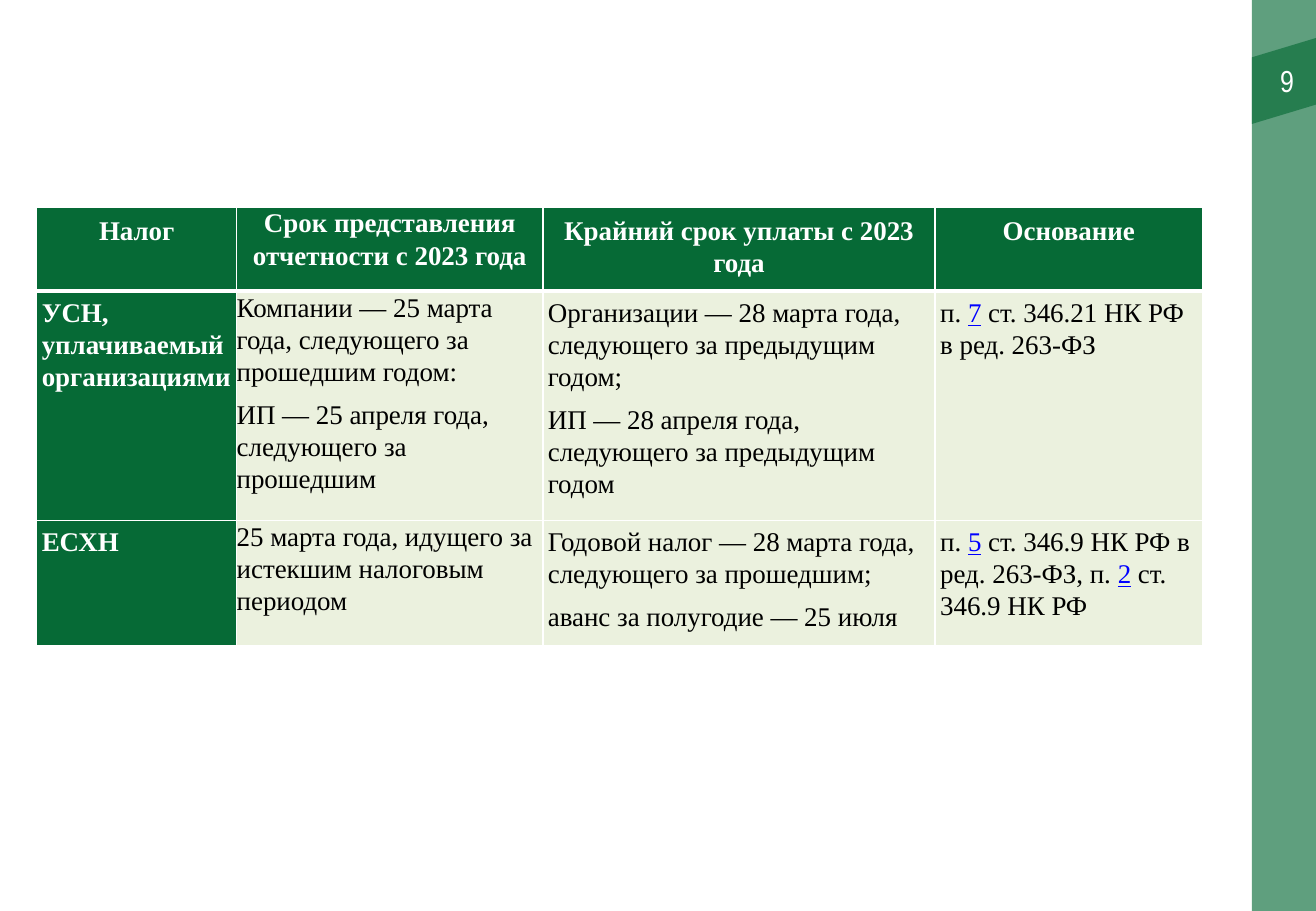
from lxml.etree import SubElement
from pptx import Presentation
from pptx.dml.color import RGBColor
from pptx.enum.shapes import MSO_SHAPE
from pptx.enum.text import MSO_ANCHOR, PP_ALIGN
from pptx.oxml.ns import qn
from pptx.util import Pt

# Text between bars is a reference, shown blue and underlined.
HEADER = ["Налог", "Срок представления отчетности с 2023 года",
          "Крайний срок уплаты с 2023 года", "Основание"]
TAXES = [
    [["УСН, уплачиваемый организациями"],
     ["Компании — 25 марта года, следующего за прошедшим годом:",
      "ИП — 25 апреля года, следующего за прошедшим"],
     ["Организации — 28 марта года, следующего за предыдущим годом;",
      "ИП — 28 апреля года, следующего за предыдущим годом"],
     ["п. |7| ст. 346.21 НК РФ в ред. 263-ФЗ"]],
    [["ЕСХН"],
     ["25 марта года, идущего за истекшим налоговым периодом"],
     ["Годовой налог — 28 марта года, следующего за прошедшим;",
      "аванс за полугодие — 25 июля"],
     ["п. |5| ст. 346.9 НК РФ в ред. 263-ФЗ, п. |2| ст. 346.9 НК РФ"]],
]
PAGE_NUMBER = "9"

COLORS = {"green": "066A36", "pale": "EBF1DE", "white": "FFFFFF",
          "black": "000000", "reference": "0000FF"}
SLIDE_WIDTH, SLIDE_HEIGHT = 780, 540
BAND_LEFT = 742
TAG_CORNERS = [(BAND_LEFT, 34), (SLIDE_WIDTH, 22.5),
               (SLIDE_WIDTH, 62), (BAND_LEFT, 73.5)]
TABLE_LEFT, TABLE_TOP = 21.8, 122.6
COLUMN_WIDTHS = [118.5, 181.5, 232.5, 158.5]
ROW_HEIGHTS = [46.5, 127, 69]
DEADLINE_COLUMN = 1
MARGINS = ("margin_left", "margin_top", "margin_right", "margin_bottom")


def rgb(name):
    return RGBColor.from_string(COLORS[name])


def apply_format(target, values):
    for attribute, value in values.items():
        setattr(target, attribute, value)


def style_band(shape):
    """Fill with see-through green, without line or shadow."""
    shape.shadow.inherit = False
    shape.line.fill.background()
    shape.fill.solid()
    shape.fill.fore_color.rgb = rgb("green")
    color = shape.fill._xPr.find(qn("a:solidFill"))[0]
    SubElement(color, qn("a:alpha"), val="64000")


def add_run(paragraph, text, color, **font_format):
    run = paragraph.add_run()
    run.text = text
    apply_format(run.font, font_format)
    run.font.color.rgb = rgb(color)


def draw_borders(cell, widths):
    properties = cell._tc.get_or_add_tcPr()
    for side, width in widths.items():
        line = SubElement(properties, qn("a:ln" + side), w=str(Pt(width)))
        fill = SubElement(line, qn("a:solidFill"))
        SubElement(fill, qn("a:srgbClr"), val=COLORS["white"])


def fill_cell(cell, paragraphs, row, column):
    is_header = row == 0
    is_dark = is_header or column == 0
    draw_borders(cell, {"L": 1, "R": 1, "T": 3 if row == 1 else 1,
                        "B": 3 if is_header else 1})
    cell.fill.solid()
    cell.fill.fore_color.rgb = rgb("green" if is_dark else "pale")

    side, top = (3.5, 4.5) if is_header else (3, 3)
    if column == DEADLINE_COLUMN:
        side = top = 0
    apply_format(cell, dict(zip(MARGINS, map(Pt, (side, top, side, top)))))

    if is_header:
        space_after = 20
    elif column == 0:
        space_after = 8
    else:
        space_after = 0 if column == len(HEADER) - 1 else 6.7
    frame = cell.text_frame
    for index, text in enumerate(paragraphs):
        paragraph = frame.add_paragraph() if index else frame.paragraphs[0]
        apply_format(paragraph, {
            "alignment": PP_ALIGN.CENTER if is_header else PP_ALIGN.LEFT,
            "line_spacing": 1.07,
            "space_after": Pt(space_after),
        })
        for position, part in enumerate(text.split("|")):
            is_reference = position % 2 == 1
            plain_color = "white" if is_dark else "black"
            add_run(paragraph, part, "reference" if is_reference else plain_color,
                    name="Times New Roman", size=Pt(16), bold=is_dark,
                    underline=is_reference)


def add_side_band(slide):
    band = slide.shapes.add_shape(
        MSO_SHAPE.RECTANGLE, Pt(BAND_LEFT), Pt(0),
        Pt(SLIDE_WIDTH - BAND_LEFT), Pt(SLIDE_HEIGHT))
    corners = [(Pt(x), Pt(y)) for x, y in TAG_CORNERS]
    outline = slide.shapes.build_freeform(*corners[0])
    outline.add_line_segments(corners[1:], close=True)
    for shape in (band, outline.convert_to_shape()):
        style_band(shape)

    number = slide.shapes.add_textbox(Pt(718.5), Pt(33), Pt(57), Pt(29)).text_frame
    apply_format(number, dict(zip(MARGINS, map(Pt, (8.5, 4.5, 8.5, 4.5)))))
    apply_format(number, {"word_wrap": True, "vertical_anchor": MSO_ANCHOR.MIDDLE})
    number.paragraphs[0].alignment = PP_ALIGN.RIGHT
    add_run(number.paragraphs[0], PAGE_NUMBER, "white",
            name="Arial Narrow", size=Pt(18))


def add_tax_table(slide):
    rows = [[[heading] for heading in HEADER]] + TAXES
    table = slide.shapes.add_table(
        len(rows), len(HEADER), Pt(TABLE_LEFT), Pt(TABLE_TOP),
        Pt(sum(COLUMN_WIDTHS)), Pt(sum(ROW_HEIGHTS))).table
    apply_format(table, {"first_row": False, "horz_banding": False})
    for column, width in zip(table.columns, COLUMN_WIDTHS):
        column.width = Pt(width)
    for row, height in zip(table.rows, ROW_HEIGHTS):
        row.height = Pt(height)
    for row, cells in enumerate(rows):
        for column, paragraphs in enumerate(cells):
            fill_cell(table.cell(row, column), paragraphs, row, column)


def main():
    presentation = Presentation()
    apply_format(presentation, {"slide_width": Pt(SLIDE_WIDTH),
                                "slide_height": Pt(SLIDE_HEIGHT)})
    slide = presentation.slides.add_slide(presentation.slide_layouts[6])
    add_side_band(slide)
    add_tax_table(slide)
    presentation.save("out.pptx")


if __name__ == "__main__":
    main()
